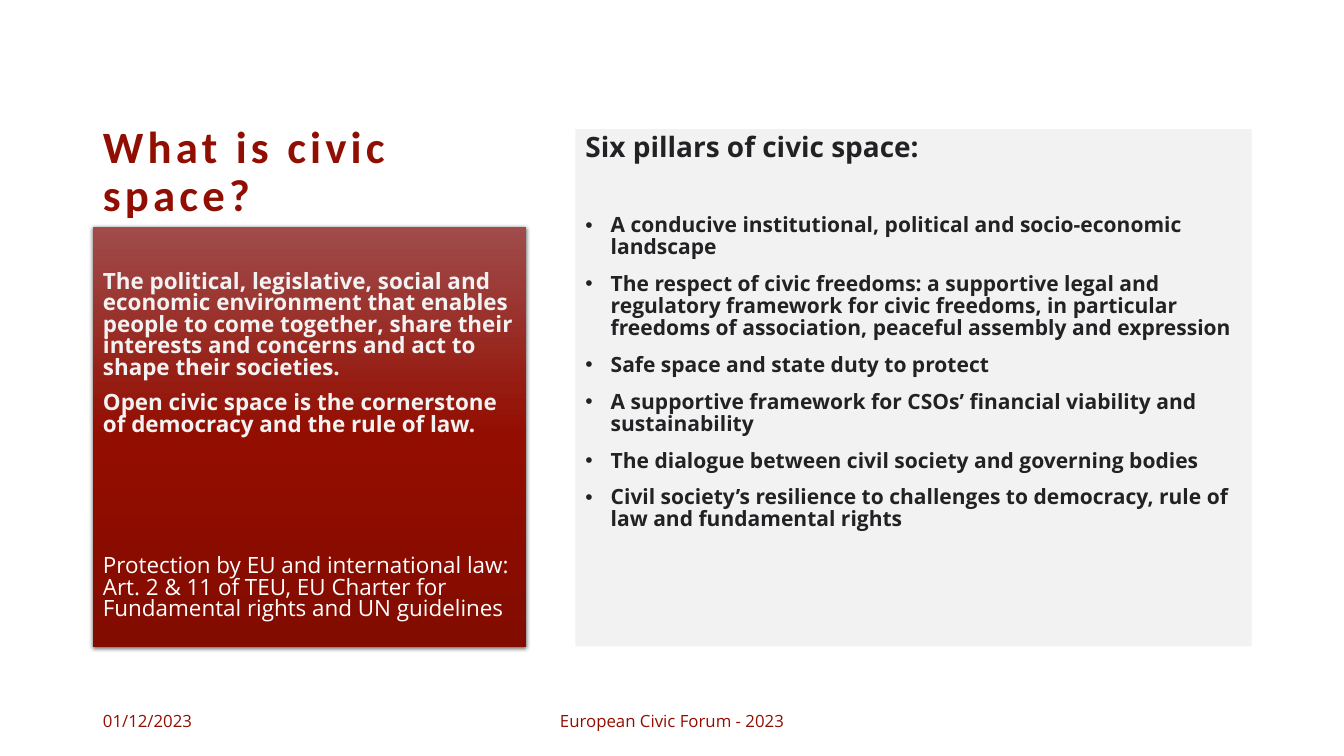
from lxml import etree
from pptx import Presentation
from pptx.dml.color import RGBColor
from pptx.enum import shapes, text
from pptx.oxml import parse_xml
from pptx.oxml.ns import nsdecls, qn
from pptx.util import Pt

COLORS = {
    "red": "910F02", "outline": "A39AA6", "panel": "F2F2F2",
    "ink": "222225", "white": "FFFFFF",
    "grad_top": "9F4C4B", "grad_mid": "930D00", "grad_end": "830C00",
}
LEFT, COL_W = 99.5, 464


def set_frame(s, anchor, top=5):
    tf = s.text_frame
    tf.word_wrap = True
    tf.auto_size = text.MSO_AUTO_SIZE.NONE
    tf.vertical_anchor = anchor
    tf.margin_left = tf.margin_right = Pt(10.8)
    tf.margin_top, tf.margin_bottom = Pt(top), Pt(5)
    return tf


def add_text(p, words, size, color, bold=False, font="Open Sans", line=1.0, before=0):
    p.line_spacing = line
    p.space_before = Pt(before)
    r = p.add_run()
    r.text = words
    r.font.name, r.font.size, r.font.bold = font, Pt(size), bold
    r.font.color.rgb = RGBColor.from_string(COLORS[color])
    return r


prs = Presentation()
prs.slide_width, prs.slide_height = Pt(1440), Pt(810)
slide = prs.slides.add_slide(prs.slide_layouts[5])

# Title
title = slide.shapes.title
title.left, title.top, title.width, title.height = Pt(LEFT), Pt(54), Pt(COL_W), Pt(188.5)
p = set_frame(title, text.MSO_ANCHOR.BOTTOM).paragraphs[0]
p.alignment = text.PP_ALIGN.LEFT
r = add_text(p, "What is civic space?", 48, "red", True, "Calibri", 0.9)
rPr = r.font._element
rPr.set("spc", "450")
rPr.insert(0, parse_xml(
    f'<a:ln {nsdecls("a")} w="19050"><a:solidFill>'
    f'<a:srgbClr val="{COLORS["outline"]}"/></a:solidFill></a:ln>'))

# Pillars panel
panel = slide.shapes.add_shape(
    shapes.MSO_SHAPE.RECTANGLE, Pt(616.5), Pt(138.5), Pt(724.5), Pt(554))
panel.shadow.inherit = False
panel.fill.solid()
panel.fill.fore_color.rgb = RGBColor.from_string(COLORS["panel"])
panel.line.fill.background()
tf = set_frame(panel, text.MSO_ANCHOR.TOP)
p = tf.paragraphs[0]
p.alignment = text.PP_ALIGN.LEFT
add_text(p, "Six pillars of civic space:", 30, "ink", True, line=0.87)

pillars = [
    "A conducive institutional, political and socio-economic landscape",
    "The respect of civic freedoms: a supportive legal and regulatory framework for civic "
    "freedoms, in particular freedoms of association, peaceful assembly and expression",
    "Safe space and state duty to protect",
    "A supportive framework for CSOs’ financial viability and sustainability",
    "The dialogue between civil society and governing bodies",
    "Civil society’s resilience to challenges to democracy, rule of law and fundamental rights",
]
for i, pillar in enumerate(pillars):
    p = tf.add_paragraph()
    p.alignment = text.PP_ALIGN.LEFT
    pPr = p._p.get_or_add_pPr()
    pPr.set("marL", str(Pt(27)))
    pPr.set("indent", str(-Pt(27)))
    etree.SubElement(pPr, qn("a:buFont"), typeface="Arial")
    etree.SubElement(pPr, qn("a:buChar"), char="•")
    add_text(p, pillar, 22.5, "ink", True, line=0.87, before=16 if i else 56)

# Definition card
card = slide.shapes.add_shape(
    shapes.MSO_SHAPE.RECTANGLE, Pt(LEFT), Pt(243), Pt(COL_W), Pt(450))
card.line.fill.background()
card.shadow.inherit = False
stops = "".join(
    f'<a:gs pos="{pos}"><a:srgbClr val="{COLORS[name]}"/></a:gs>'
    for pos, name in [(0, "grad_top"), (50000, "grad_mid"), (100000, "grad_end")])
spPr = card._element.spPr
spPr.find(qn("a:prstGeom")).addnext(parse_xml(
    f'<a:gradFill {nsdecls("a")} rotWithShape="1"><a:gsLst>{stops}</a:gsLst>'
    '<a:lin ang="5400000" scaled="0"/></a:gradFill>'))
spPr.find(qn("a:effectLst")).append(parse_xml(
    f'<a:outerShdw {nsdecls("a")} blurRad="{Pt(4.5)}" dist="{Pt(1.5)}" dir="5400000" '
    'rotWithShape="0"><a:srgbClr val="000000"><a:alpha val="63000"/></a:srgbClr></a:outerShdw>'))
tf = set_frame(card, text.MSO_ANCHOR.TOP, 48.5)
definition = [
    ("The political, legislative, social and economic environment that enables people to come "
     "together, share their interests and concerns and act to shape their societies.",
     "panel", True, 0),
    ("Open civic space is the cornerstone of democracy and the rule of law.", "panel", True, 15),
    ("Protection by EU and international law: Art. 2 & 11 of TEU, EU Charter for "
     "Fundamental rights and UN guidelines", "white", False, 128.5),
]
for i, (words, color, bold, before) in enumerate(definition):
    p = tf.add_paragraph() if i else tf.paragraphs[0]
    p.alignment = text.PP_ALIGN.LEFT
    add_text(p, words, 24, color, bold, line=0.8, before=before)

# Date and footer
for left, width, align, words in [
    (LEFT, 324, text.PP_ALIGN.LEFT, "01/12/2023"),
    (477, 486, text.PP_ALIGN.CENTER, "European Civic Forum - 2023"),
]:
    s = slide.shapes.add_textbox(Pt(left), Pt(751), Pt(width), Pt(43))
    p = set_frame(s, text.MSO_ANCHOR.MIDDLE).paragraphs[0]
    p.alignment = align
    add_text(p, words, 18, "red")

prs.save("out.pptx")
